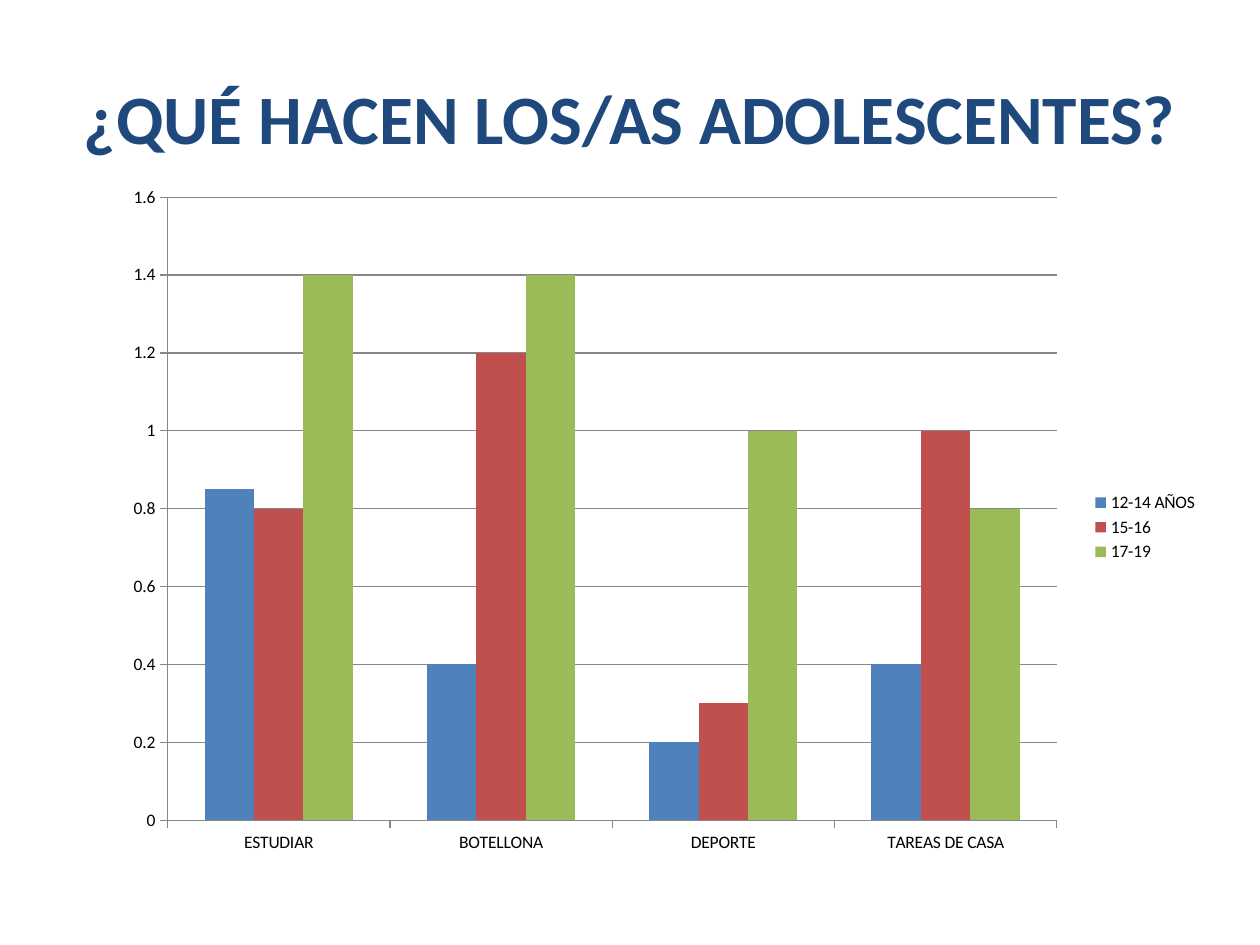
from lxml import etree
from pptx import Presentation
from pptx import util as u
from pptx.chart.data import CategoryChartData
from pptx.dml.color import RGBColor
from pptx.enum import chart as ch, text
from pptx.oxml import ns

W, H = u.Inches(10), u.Inches(7.5)
FONT = "Calibri"
COLORS = {
    "title": "1F497D",
    "text": "000000",
    "line": "878787",
    "12-14 AÑOS": "4F81BD",
    "15-16": "C0504D",
    "17-19": "9BBB59",
}
CATEGORIES = ["ESTUDIAR", "BOTELLONA", "DEPORTE", "TAREAS DE CASA"]
SERIES = {
    "12-14 AÑOS": [0.85, 0.4, 0.2, 0.4],
    "15-16": [0.8, 1.2, 0.3, 1],
    "17-19": [1.4, 1.4, 1, 0.8],
}
TITLE_BOX = (0.05, 0.04, 0.9, 0.1667)
CHART_BOX = (0.094, 0.188, 0.867, 0.74)
PLOT_BOX = {"x": 0.045, "y": 0.028, "w": 0.814, "h": 0.891}


def rgb(name):
    return RGBColor.from_string(COLORS[name])


def place(box):
    return [int(share * size) for share, size in zip(box, (W, H, W, H))]


def set_font(font, size, color, bold=False):
    font.name, font.size, font.bold = FONT, u.Pt(size), bold
    font.color.rgb = rgb(color)


def add_text(s, box, content, size=18, color="text", bold=False,
             align=text.PP_ALIGN.CENTER, anchor=text.MSO_ANCHOR.MIDDLE):
    tf = s.shapes.add_textbox(*place(box)).text_frame
    tf.word_wrap = True
    tf.vertical_anchor = anchor
    p = tf.paragraphs[0]
    p.alignment = align
    r = p.add_run()
    r.text = content
    set_font(r.font, size, color, bold)


def set_plot_layout(chart, box):
    area = chart.plots[0]._element.getparent()
    for old in area.findall(ns.qn("c:layout")):
        area.remove(old)
    layout = etree.Element(ns.qn("c:layout"))
    manual = etree.SubElement(layout, ns.qn("c:manualLayout"))
    settings = {"layoutTarget": "inner", "xMode": "edge", "yMode": "edge", **box}
    for tag, value in settings.items():
        etree.SubElement(manual, ns.qn(f"c:{tag}")).set("val", str(value))
    area.insert(0, layout)


def style_axis(axis):
    axis.major_tick_mark = ch.XL_TICK_MARK.OUTSIDE
    axis.minor_tick_mark = ch.XL_TICK_MARK.NONE
    axis.format.line.color.rgb = rgb("line")
    axis.format.line.width = u.Pt(0.75)


def add_activity_chart(s, box):
    data = CategoryChartData()
    data.categories = CATEGORIES
    for name, values in SERIES.items():
        data.add_series(name, values)
    kind = ch.XL_CHART_TYPE.COLUMN_CLUSTERED
    chart = s.shapes.add_chart(kind, *place(box), data).chart
    set_font(chart.font, 10, "text")
    chart.has_title = False
    chart.has_legend = True
    chart.legend.position = ch.XL_LEGEND_POSITION.RIGHT
    chart.legend.include_in_layout = False

    plot = chart.plots[0]
    plot.vary_by_categories = False
    plot.gap_width, plot.overlap = 150, 0
    for series in plot.series:
        series.format.fill.solid()
        series.format.fill.fore_color.rgb = rgb(series.name)

    style_axis(chart.category_axis)
    axis = chart.value_axis
    style_axis(axis)
    axis.minimum_scale, axis.maximum_scale, axis.major_unit = 0, 1.6, 0.2
    axis.has_major_gridlines = True
    axis.major_gridlines.format.line.color.rgb = rgb("line")
    axis.major_gridlines.format.line.width = u.Pt(0.75)
    set_plot_layout(chart, PLOT_BOX)


def main():
    prs = Presentation()
    prs.slide_width, prs.slide_height = W, H
    s = prs.slides.add_slide(prs.slide_layouts[6])
    add_text(s, TITLE_BOX, "¿QUÉ HACEN LOS/AS ADOLESCENTES?",
             size=39.6, color="title", bold=True)
    add_activity_chart(s, CHART_BOX)
    prs.save("out.pptx")


if __name__ == "__main__":
    main()
